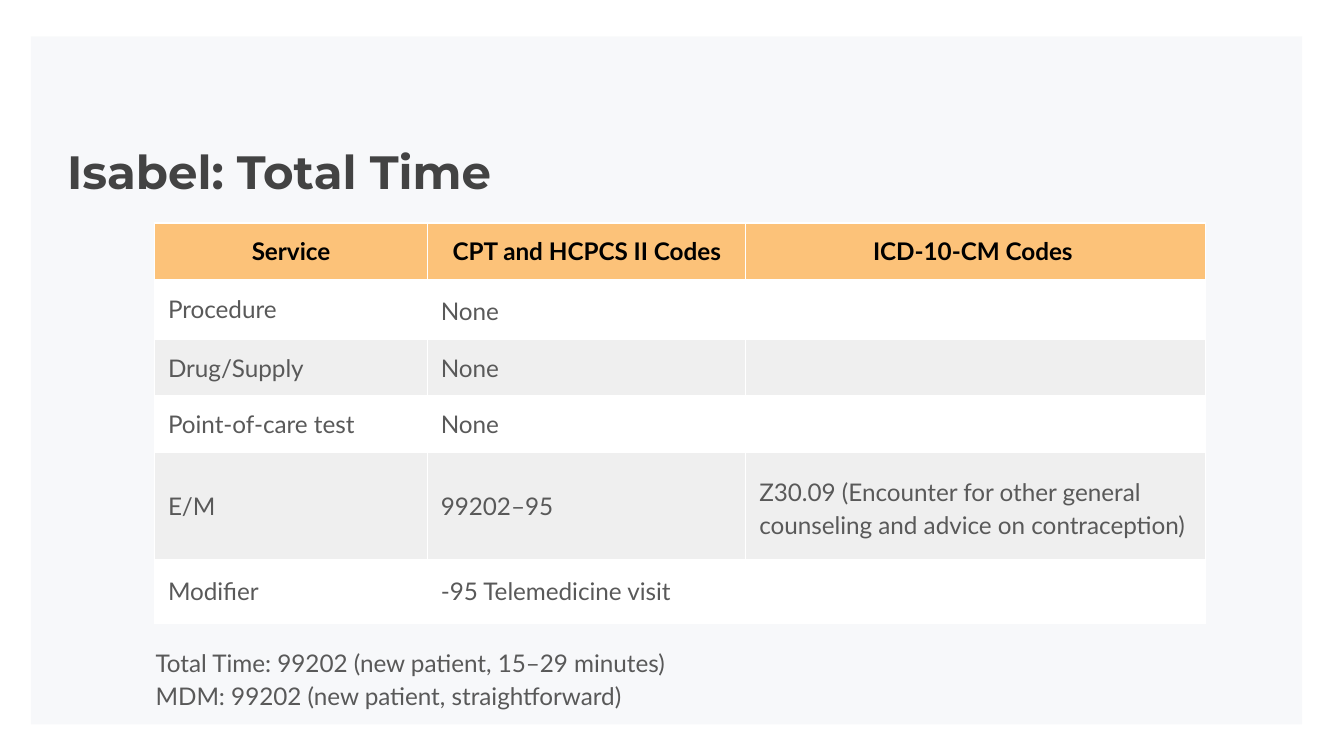
from lxml import etree
from pptx import Presentation
from pptx.dml.color import RGBColor
from pptx.enum import shapes, text
from pptx.oxml.ns import qn
from pptx.util import Inches, Pt

# Content
TITLE = "Isabel: Total Time"
HEADERS = ["Service", "CPT and HCPCS II Codes", "ICD-10-CM Codes "]
ROWS = [
    ["Procedure", "None", ""],
    ["Drug/Supply", "None", ""],
    ["Point-of-care test", "None", ""],
    ["E/M", "99202–95",
     "Z30.09 (Encounter for other general counseling and advice on contraception)"],
    ["Modifier", "-95 Telemedicine visit", ""],
]
NOTES = ["Total Time: 99202 (new patient, 15–29 minutes)",
         "MDM: 99202 (new patient, straightforward)"]

# Layout and formats
COL_WIDTHS = [2.03, 2.37, 3.42]
ROW_HEIGHTS = [0.38, 0.42, 0.42, 0.42, 0.8, 0.47]
LOOSE_CELLS = {(1, 1), (4, 2)}
TITLE_FONT = {"name": "Montserrat", "size": Pt(25), "bold": True}
HEAD_FONT = {"name": "Lato", "size": Pt(13), "bold": True}
BODY_FONT = {"name": "Lato", "size": Pt(13), "bold": False}
MARGINS = ["margin_left", "margin_top", "margin_right", "margin_bottom"]


def box(*lengths):
    return [Inches(v) for v in lengths]


def paint(fill, color, alpha=100):
    fill.solid()
    fill.fore_color.rgb = RGBColor.from_string(color)
    if alpha < 100:
        clr = fill._xPr.find(qn("a:solidFill"))[0]
        etree.SubElement(clr, qn("a:alpha"), val=str(alpha * 1000))


def set_margins(target):
    for side in MARGINS:
        setattr(target, side, Inches(0.1))


def write(p, words, font, color, spacing=None, align=text.PP_ALIGN.LEFT):
    p.alignment = align
    p.line_spacing = spacing
    if not words:  # keep an empty cell from growing its row
        end = etree.SubElement(p._p, qn("a:endParaRPr"), sz=str(int(font["size"].pt * 100)))
        etree.SubElement(end, qn("a:latin"), typeface=font["name"])
        return
    r = p.add_run()
    r.text = words
    for key, value in font.items():
        setattr(r.font, key, value)
    r.font.color.rgb = RGBColor.from_string(color)


def add_borders(cell, color, width):
    tcPr = cell._tc.get_or_add_tcPr()
    for i, side in enumerate(["lnL", "lnR", "lnT", "lnB"]):
        ln = etree.Element(qn(f"a:{side}"), w=str(Pt(width)))
        fill = etree.SubElement(ln, qn("a:solidFill"))
        etree.SubElement(fill, qn("a:srgbClr"), val=color)
        tcPr.insert(i, ln)


# Widescreen slide, 16:9
prs = Presentation()
prs.slide_width = Inches(10)
prs.slide_height = Inches(10 * 9 / 16)
s = prs.slides.add_slide(prs.slide_layouts[5])

# Pale panel, behind the title
panel = s.shapes.add_shape(shapes.MSO_SHAPE.RECTANGLE, *box(0.23, 0.27, 9.46, 5.12))
panel.shadow.inherit = False
panel.line.fill.background()
paint(panel.fill, "073763", 3)
s.shapes._spTree.insert(2, panel._element)

# Title
title = s.shapes.title
title.left, title.top, title.width, title.height = box(0.4, 0.96, 9.32, 0.63)
tf = title.text_frame
set_margins(tf)
tf.auto_size = text.MSO_AUTO_SIZE.NONE
tf.vertical_anchor = text.MSO_ANCHOR.TOP
write(tf.paragraphs[0], TITLE, TITLE_FONT, "434343")

# Notes under the table
notes = s.shapes.add_textbox(*box(1.06, 4.69, 8.13, 0.47))
tf = notes.text_frame
set_margins(tf)
tf.word_wrap = True
for i, line in enumerate(NOTES):
    p = tf.add_paragraph() if i else tf.paragraphs[0]
    write(p, line, BODY_FONT, "595959", 1.15)

# Codes table
table = s.shapes.add_table(len(ROW_HEIGHTS), len(COL_WIDTHS), *box(
    1.15, 1.66, sum(COL_WIDTHS), sum(ROW_HEIGHTS))).table
for column, width in zip(table.columns, COL_WIDTHS):
    column.width = Inches(width)
for row, height in zip(table.rows, ROW_HEIGHTS):
    row.height = Inches(height)
for i, row in enumerate([HEADERS] + ROWS):
    for j, words in enumerate(row):
        cell = table.cell(i, j)
        set_margins(cell)
        p = cell.text_frame.paragraphs[0]
        if i == 0:
            paint(cell.fill, "FFAB40", 69)
            write(p, words, HEAD_FONT, "000000", align=text.PP_ALIGN.CENTER)
        else:
            cell.vertical_anchor = text.MSO_ANCHOR.MIDDLE
            paint(cell.fill, "FFFFFF" if i % 2 else "EFEFEF")
            write(p, words, BODY_FONT, "595959", 1.15 if (i, j) in LOOSE_CELLS else None)
        add_borders(cell, "FFFFFF", 0.75)

prs.save("out.pptx")
